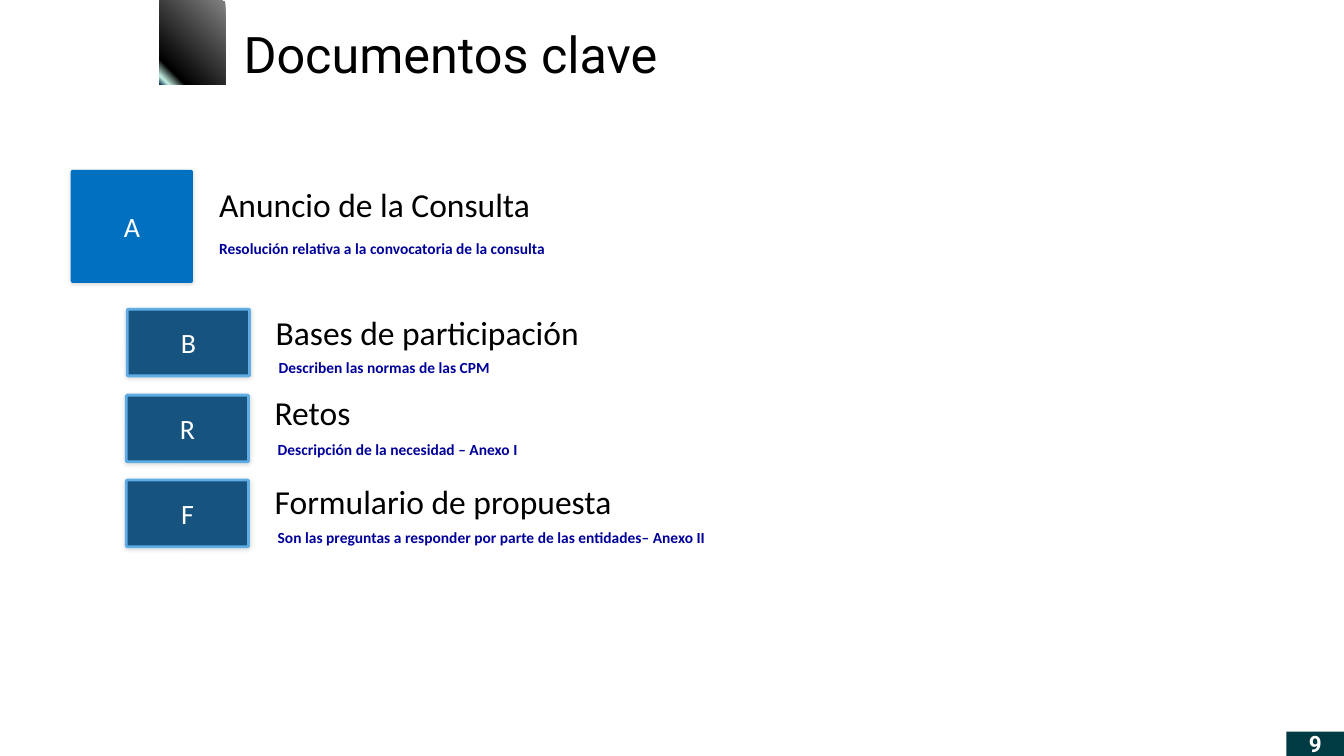
from copy import deepcopy
from dataclasses import dataclass

from lxml.etree import SubElement
from pptx import Presentation
from pptx.dml.color import RGBColor
from pptx.enum.shapes import MSO_SHAPE as Preset
from pptx.enum.text import MSO_ANCHOR as Anchor, MSO_AUTO_SIZE as AutoSize, PP_ALIGN as Align
from pptx.oxml.ns import qn
from pptx.shapes.autoshape import Shape
from pptx.slide import Slide
from pptx.util import Inches, Pt

COLORS = {
    "black": "000000",
    "white": "FFFFFF",
    "main": "0070C0",
    "secondary": "16537F",
    "outline": "5FADE4",
    "detail": "000099",
    "page": "003A43",
}
ACCENT_STOPS = [(0, "808080"), (83, "000000"), (94, "C8F5E8"), (100, "0F3754")]
BADGE_WIDTH = 1.21
TEXT_GAP = 0.16


@dataclass
class Document:
    letter: str
    name: str
    detail: str
    left: float
    top: float
    name_top: float
    detail_top: float
    height: float = 0.66
    detail_indent: float = 0.03
    fill: str = "secondary"
    outlined: bool = True


DOCUMENTS = [
    Document("A", "Anuncio de la Consulta", "Resolución relativa a la convocatoria de la consulta",
             0.7, 1.68, 1.85, 2.35, height=1.12, detail_indent=0, fill="main", outlined=False),
    Document("B", "Bases de participación", "Describen las normas de las CPM",
             1.26, 3.06, 3.11, 3.53),
    Document("R", "Retos", "Descripción de la necesidad – Anexo I",
             1.25, 3.91, 3.91, 4.34),
    Document("F", "Formulario de propuesta",
             "Son las preguntas a responder por parte de las entidades– Anexo II",
             1.25, 4.75, 4.79, 5.21),
]


def rgb(color: str) -> RGBColor:
    return RGBColor.from_string(COLORS[color])


def write(shape: Shape, text: str, size: float, color: str, font: str = "Calibri",
          bold: bool = False, align: Align = Align.LEFT) -> None:
    paragraph = shape.text_frame.paragraphs[0]
    paragraph.text = text
    paragraph.alignment = align
    run_font = paragraph.runs[0].font
    run_font.name = font
    run_font.size = Pt(size)
    run_font.bold = bold
    run_font.color.rgb = rgb(color)


def add_block(slide: Slide, preset: Preset, left: float, top: float,
              width: float, height: float) -> Shape:
    """Add a preset shape without line or shadow, its text centred vertically."""
    block = slide.shapes.add_shape(preset, Inches(left), Inches(top), Inches(width), Inches(height))
    block.shadow.inherit = False
    block.line.fill.background()
    block.text_frame.vertical_anchor = Anchor.MIDDLE
    return block


def fill_solid(shape: Shape, color: str) -> None:
    shape.fill.solid()
    shape.fill.fore_color.rgb = rgb(color)


def add_soft_shadow(shape: Shape) -> None:
    effects = shape.element.spPr.find(qn("a:effectLst"))
    shadow = SubElement(effects, qn("a:outerShdw"), blurRad=str(Pt(3)), dist=str(Pt(1)),
                        dir="5400000", rotWithShape="0")
    tint = SubElement(shadow, qn("a:srgbClr"), val=COLORS["black"])
    SubElement(tint, qn("a:alpha"), val="15000")


def add_accent(slide: Slide) -> None:
    accent = add_block(slide, Preset.RECTANGLE, 1.58, 0.01, 0.65, 0.83)
    accent.fill.gradient()
    accent.fill.gradient_angle = 225
    stop_list = accent.element.spPr.find(qn("a:gradFill")).find(qn("a:gsLst"))
    for _ in ACCENT_STOPS[2:]:
        stop_list.append(deepcopy(stop_list[0]))
    for stop, (position, color) in zip(accent.fill.gradient_stops, ACCENT_STOPS):
        stop.position = position / 100
        stop.color.rgb = RGBColor.from_string(color)


def add_title(slide: Slide) -> None:
    title = slide.shapes.title
    title.left, title.top = Inches(2.31), Inches(0.18)
    title.width, title.height = Inches(4.81), Inches(0.7)
    frame = title.text_frame
    frame.word_wrap = False
    frame.auto_size = AutoSize.NONE
    frame.vertical_anchor = Anchor.TOP
    write(title, "Documentos clave", 35.9, "black", "Roboto")


def add_caption(slide: Slide, text: str, left: float, top: float, height: float,
                size: float, color: str, bold: bool = False) -> None:
    caption = slide.shapes.add_textbox(Inches(left), Inches(top), Inches(6), Inches(height))
    caption.text_frame.word_wrap = True
    write(caption, text, size, color, bold=bold)
    caption.text_frame.paragraphs[0].line_spacing = 0.8


def add_document(slide: Slide, document: Document) -> None:
    badge = add_block(slide, Preset.ROUNDED_RECTANGLE, document.left, document.top,
                      BADGE_WIDTH, document.height)
    badge.adjustments[0] = 0.02
    fill_solid(badge, document.fill)
    if document.outlined:
        badge.line.color.rgb = rgb("outline")
        badge.line.width = Pt(2)
    add_soft_shadow(badge)
    write(badge, document.letter, 19.9, "white", align=Align.CENTER)

    text_left = document.left + BADGE_WIDTH + TEXT_GAP
    add_caption(slide, document.name, text_left, document.name_top, 0.45, 23.9, "black")
    add_caption(slide, document.detail, text_left + document.detail_indent,
                document.detail_top, 0.27, 11, "detail", bold=True)


def add_page_number(slide: Slide) -> None:
    page = add_block(slide, Preset.RECTANGLE, 12.73, 7.24, 0.57, 0.24)
    fill_solid(page, "page")
    page.text_frame.margin_top = page.text_frame.margin_bottom = 0
    write(page, "9", 16, "white", "Roboto", bold=True, align=Align.CENTER)


def main() -> None:
    deck = Presentation()
    deck.slide_width, deck.slide_height = Inches(13.3), Inches(7.48)
    slide = deck.slides.add_slide(deck.slide_layouts.get_by_name("Title Only"))
    add_accent(slide)
    add_title(slide)
    for document in DOCUMENTS:
        add_document(slide, document)
    add_page_number(slide)
    deck.save("out.pptx")


if __name__ == "__main__":
    main()
